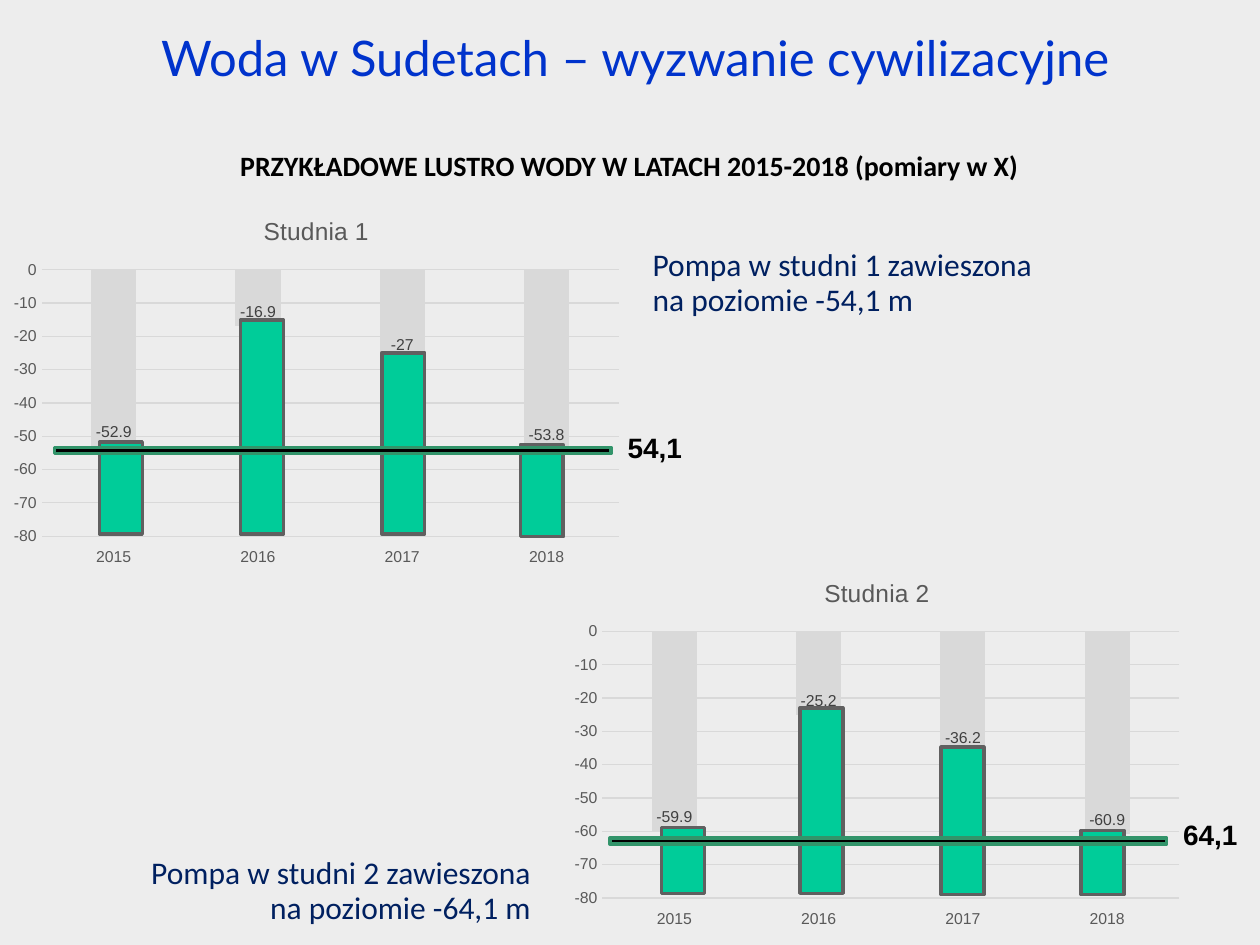
from lxml.etree import SubElement
from pptx import Presentation
from pptx.chart.data import CategoryChartData
from pptx.dml.color import RGBColor
from pptx.enum.chart import (XL_CHART_TYPE, XL_LABEL_POSITION, XL_TICK_LABEL_POSITION,
                             XL_TICK_MARK)
from pptx.enum.shapes import MSO_SHAPE
from pptx.enum.text import MSO_ANCHOR, PP_ALIGN
from pptx.oxml.ns import qn
from pptx.util import Pt

BACKGROUND = RGBColor(0xED, 0xED, 0xED)
BLUE = RGBColor(0x00, 0x33, 0xCC)
NAVY = RGBColor(0x00, 0x20, 0x60)
BLACK = RGBColor(0, 0, 0)
GRAY = RGBColor(0x59, 0x59, 0x59)
LABEL_GRAY = RGBColor(0x40, 0x40, 0x40)
LIGHT_GRAY = RGBColor(0xD9, 0xD9, 0xD9)
WATER = RGBColor(0x00, 0xCC, 0x99)
WATER_EDGE = RGBColor(0x60, 0x60, 0x60)
PUMP_EDGE = RGBColor(0x32, 0x94, 0x6A)

YEARS = ("2015", "2016", "2017", "2018")
BAR_WIDTH = 24.5


def write_text(frame, text, font="Calibri", size=18, color=BLACK, bold=False,
               align=PP_ALIGN.LEFT, anchor=MSO_ANCHOR.TOP):
    frame.word_wrap = True
    frame.vertical_anchor = anchor
    para = frame.paragraphs[0]
    para.alignment = align
    para.line_spacing = 0.93
    para.space_before = Pt(0)
    span = para.add_run()
    span.text = text
    set_font(span.font, size, color, font, bold)


def set_font(font, size, color, name="Arial", bold=False):
    font.name = name
    font.size = Pt(size)
    font.bold = bold
    font.color.rgb = color


class SlideBuilder:
    def __init__(self, deck):
        self.page = deck.slides.add_slide(deck.slide_layouts[5])
        fill = self.page.background.fill
        fill.solid()
        fill.fore_color.rgb = BACKGROUND

    def title(self, text, left, top, width, height):
        box = self.page.shapes.title
        box.left, box.top, box.width, box.height = map(Pt, (left, top, width, height))
        write_text(box.text_frame, text, font="Lato", size=28, color=BLUE,
                   align=PP_ALIGN.CENTER, anchor=MSO_ANCHOR.MIDDLE)

    def text(self, text, left, top, width, height, **style):
        box = self.page.shapes.add_textbox(*map(Pt, (left, top, width, height)))
        write_text(box.text_frame, text, **style)

    def rectangle(self, left, top, width, height, fill, edge):
        box = self.page.shapes.add_shape(MSO_SHAPE.RECTANGLE,
                                         *map(Pt, (left, top, width, height)))
        box.shadow.inherit = False
        box.fill.solid()
        box.fill.fore_color.rgb = fill
        box.line.color.rgb = edge
        box.line.width = Pt(2)

    def chart(self, name, levels, left, top):
        data = CategoryChartData()
        data.categories = YEARS
        data.add_series(name, levels)
        chart = self.page.shapes.add_chart(XL_CHART_TYPE.COLUMN_CLUSTERED, Pt(left), Pt(top),
                                           Pt(360), Pt(216), data).chart
        set_font(chart.font, 10, BLACK)
        chart.has_legend = False
        chart.has_title = True
        span = chart.chart_title.text_frame.paragraphs[0].add_run()
        span.text = name
        set_font(span.font, 14, GRAY)
        chart.chart_title.include_in_layout = False

        # Axes and grid
        years, depth = chart.category_axis, chart.value_axis
        for axis in (years, depth):
            axis.major_tick_mark = axis.minor_tick_mark = XL_TICK_MARK.NONE
            set_font(axis.tick_labels.font, 9, GRAY)
        years.tick_label_position = XL_TICK_LABEL_POSITION.LOW
        depth.minimum_scale, depth.maximum_scale, depth.major_unit = -80, 0, 10
        depth.format.line.fill.background()
        for line in (years.format.line, depth.major_gridlines.format.line):
            line.color.rgb = LIGHT_GRAY
            line.width = Pt(0.75)

        # Columns and their labels
        plot = chart.plots[0]
        plot.gap_width, plot.overlap = 219, -27
        plot.vary_by_categories = False
        series = plot.series[0]
        series.invert_if_negative = False
        series.format.fill.solid()
        series.format.fill.fore_color.rgb = LIGHT_GRAY
        labels = series.data_labels
        labels.show_value = True
        labels.position = XL_LABEL_POSITION.INSIDE_END
        set_font(labels.font, 9, LABEL_GRAY)

    def well(self, name, levels, chart_at, bars, pump_at, pump_depth, depth_at):
        self.chart(name, levels, *chart_at)
        for left, top, bottom in bars:
            self.rectangle(left, top, BAR_WIDTH, bottom - top, WATER, WATER_EDGE)
        self.rectangle(*pump_at, 318.2, 3.6, BLACK, PUMP_EDGE)
        self.text(pump_depth, *depth_at, 57, 26.6, font="Arial", size=16, bold=True,
                  align=PP_ALIGN.CENTER)


def main():
    deck = Presentation()
    deck.slide_width, deck.slide_height = Pt(720), Pt(540)
    builder = SlideBuilder(deck)

    # Headings
    builder.title("Woda w Sudetach – wyzwanie cywilizacyjne", 41.8, 15.1, 642.2, 38.2)
    builder.text("PRZYKŁADOWE LUSTRO WODY W LATACH 2015-2018 (pomiary w X)",
                 -0.7, 82.8, 720.7, 25.2, size=16, bold=True, align=PP_ALIGN.CENTER)

    # Wells: water bars are (left, top, bottom)
    builder.well("Studnia 1", (-52.9, -16.9, -27, -53.8), (0.7, 112.3),
                 ((56.9, 252.7, 305.3), (137.5, 182.9, 305.3),
                  (218.2, 201.6, 305.3), (297.4, 254.2, 306.7)),
                 (31, 255.6), "54,1", (345.6, 244.1))
    builder.well("Studnia 2", (-59.9, -25.2, -36.2, -60.9), (321.1, 319),
                 ((378, 473, 510.5), (457.2, 404.6, 510.5),
                  (537.8, 427, 511.2), (617.8, 474.5, 511.2)),
                 (348.5, 478.8), "64,1", (663.1, 465.1))

    # Pump notes
    builder.text("Pompa w studni 1 zawieszona na poziomie -54,1 m",
                 365.8, 138.2, 238.3, 47.5, color=NAVY)
    builder.text("Pompa w studni 2 zawieszona na poziomie -64,1 m",
                 70.6, 486, 239.8, 47.5, color=NAVY, align=PP_ALIGN.RIGHT)

    deck.save("out.pptx")


if __name__ == "__main__":
    main()
